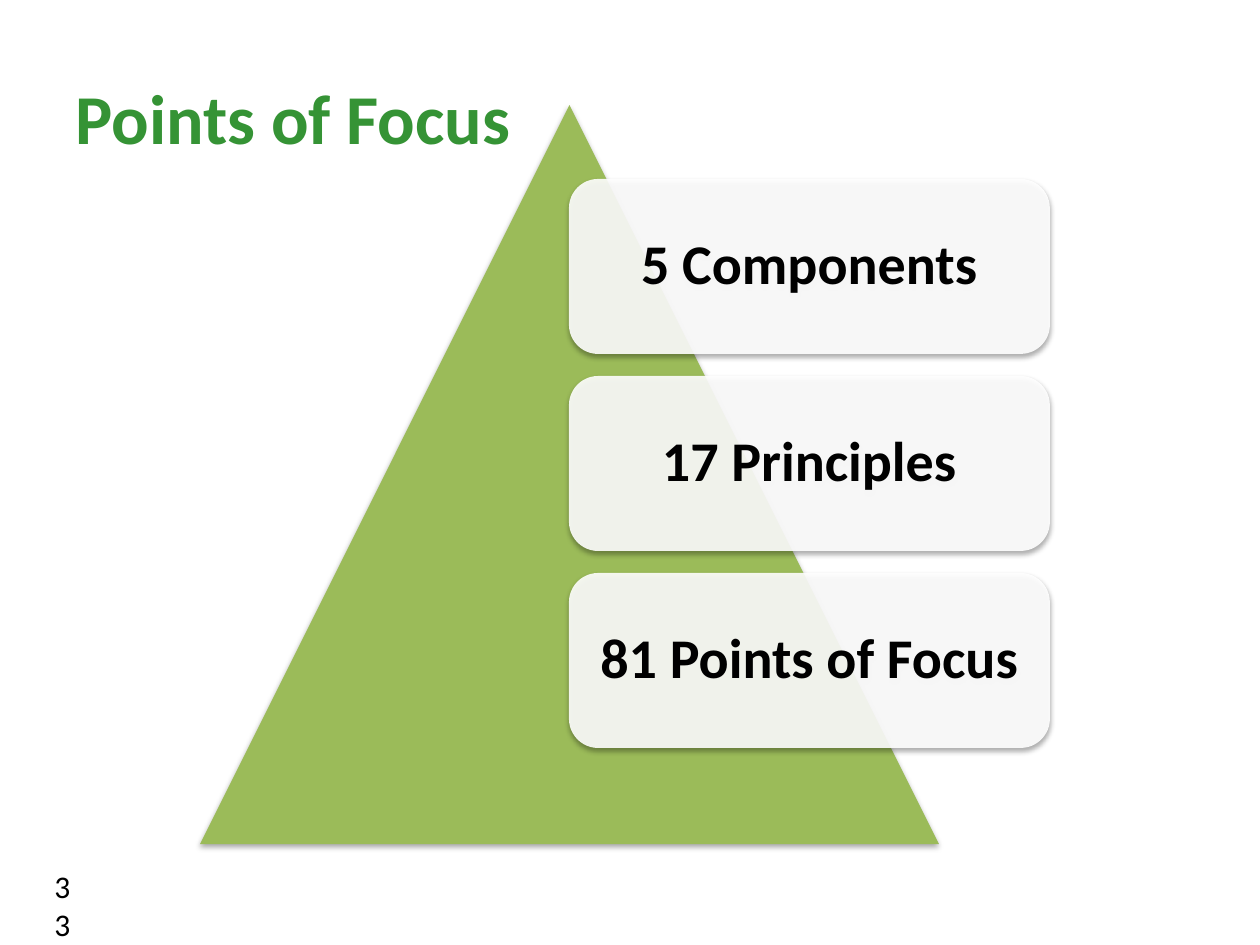
"""Build the Points of Focus slide: a pyramid with three labelled cards."""
from lxml.etree import SubElement
from pptx import Presentation
from pptx.dml.color import RGBColor
from pptx.enum.shapes import MSO_SHAPE
from pptx.enum.text import MSO_ANCHOR, PP_ALIGN
from pptx.oxml.ns import qn
from pptx.util import Emu, Pt

PX = 914400 / 126
CARDS = ["5 Components", "17 Principles", "81 Points of Focus"]
CARD_TOP, CARD_PITCH = 179, 197


def box(*lengths):
    return [Emu(round(n * PX)) for n in lengths]


def style(obj, size, color, bold):
    obj.font.name, obj.font.size, obj.font.bold = "Calibri", Pt(size), bold
    obj.font.color.rgb = RGBColor.from_string(color)


prs = Presentation()
prs.slide_width, prs.slide_height = box(1260, 945)
s = prs.slides.add_slide(prs.slide_layouts[5])

title = s.shapes.title
title.left, title.top, title.width, title.height = box(63, 38, 1134, 158)
title.text_frame.vertical_anchor = MSO_ANCHOR.MIDDLE
p = title.text_frame.paragraphs[0]
p.alignment = PP_ALIGN.LEFT
r = p.add_run()
r.text = "Points of Focus"
style(r, 40, "359335", True)

pyramid = s.shapes.add_shape(MSO_SHAPE.ISOSCELES_TRIANGLE, *box(200, 105, 739, 739))
pyramid.fill.solid()
pyramid.fill.fore_color.rgb = RGBColor.from_string("9BBB59")
shapes = [pyramid]

for i, label in enumerate(CARDS):
    sp = s.shapes.add_shape(MSO_SHAPE.ROUNDED_RECTANGLE,
                            *box(569, CARD_TOP + i * CARD_PITCH, 481, 175))
    sp.fill.solid()
    sp.fill.fore_color.rgb = RGBColor.from_string("FFFFFF")
    color = sp._element.spPr.find(qn("a:solidFill"))[0]
    SubElement(color, qn("a:alpha"), val="90000")
    tf = sp.text_frame
    tf.word_wrap = True
    tf.vertical_anchor = MSO_ANCHOR.MIDDLE
    tf.margin_left, tf.margin_top, tf.margin_right, tf.margin_bottom = box(16, 16, 16, 16)
    p = tf.paragraphs[0]
    p.alignment = PP_ALIGN.CENTER
    p.line_spacing = 0.9
    r = p.add_run()
    r.text = label
    style(r, 32, "000000", True)
    shapes.append(sp)

for sp in shapes:
    sp.line.fill.background()
    sp.shadow.inherit = False
    effects = sp._element.spPr.find(qn("a:effectLst"))
    shadow = SubElement(effects, qn("a:outerShdw"), blurRad=str(Pt(3.1)),
                        dist=str(Pt(1.8)), dir="5400000", rotWithShape="0")
    color = SubElement(shadow, qn("a:srgbClr"), val="000000")
    SubElement(color, qn("a:alpha"), val="35000")

number = s.shapes.add_textbox(*box(42, 861, 42, 50))
number.text_frame.word_wrap = True
r = number.text_frame.paragraphs[0].add_run()
r.text = "33"
style(r, 18, "000000", False)

prs.save("out.pptx")
